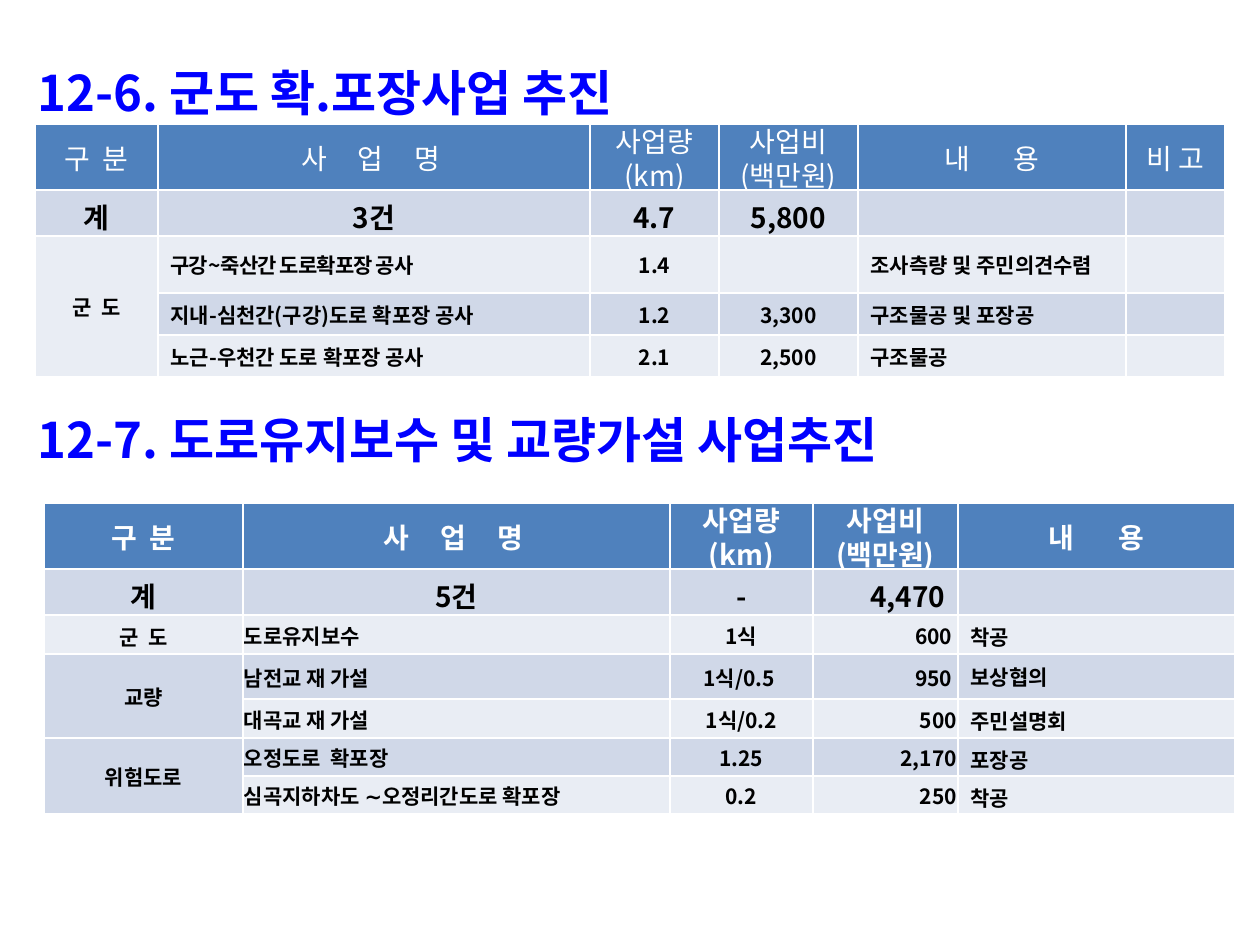
from dataclasses import dataclass

from lxml.etree import SubElement
from pptx import Presentation
from pptx.dml.color import RGBColor
from pptx.enum.text import MSO_ANCHOR, PP_ALIGN
from pptx.oxml.ns import qn
from pptx.util import Emu, Pt


@dataclass(frozen=True)
class Theme:
    """Colours, font and type sizes of the slide."""
    font: str = "Noto Sans CJK KR"
    title: str = "0000FF"
    head: str = "4F81BD"
    bands: tuple = ("E9EDF4", "D0D8E8")
    ink: str = "000000"
    white: str = "FFFFFF"
    big: int = 28
    mid: int = 16
    small: int = 12


THEME = Theme()
ALIGN = {"l": PP_ALIGN.LEFT, "c": PP_ALIGN.CENTER, "r": PP_ALIGN.RIGHT}
HEADS = ["구  분", "사     업     명 ", "사업량\n(km)", "사업비\n(백만원)", "내       용", "비 고"]
ROADS = [
    HEADS,
    ["계", "3건", "4.7", "5,800", "", ""],
    ["군  도", "구강~죽산간 도로확포장 공사", "1.4", "", "조사측량 및 주민의견수렴", ""],
    [None, "지내-심천간(구강)도로 확포장 공사", "1.2", "3,300", "구조물공 및 포장공", ""],
    [None, "노근-우천간 도로 확포장 공사", "2.1", "2,500", "구조물공", ""],
]
REPAIRS = [
    HEADS[:5],
    ["계", "5건", "-", "4,470", ""],
    ["군  도", "도로유지보수", " 1식 ", "600 ", "착공"],
    ["교량", "남전교 재 가설", "1식/0.5 ", "950 ", "보상협의"],
    [None, "대곡교 재 가설", "1식/0.2", "500", "주민설명회"],
    ["위험도로", "오정도로  확포장", "1.25", "2,170", "포장공"],
    [None, "심곡지하차도 ∼오정리간도로 확포장", "0.2", "250", "착공"],
]


def px(count):
    """Turn pixels into EMU."""
    return Emu(round(count * 914400 / 126))


def style(run, size, color, bold):
    """Give a run its font, size and colour."""
    run.font.name, run.font.size, run.font.bold = THEME.font, Pt(size), bold
    run.font.color.rgb = RGBColor.from_string(color)
    SubElement(run.font._element, qn("a:ea"), typeface=THEME.font)


def add_title(slide, box, text, ratio):
    """Place a section title in its box."""
    frame = slide.shapes.add_textbox(*map(px, box)).text_frame
    frame.word_wrap = True
    frame.text = text
    para = frame.paragraphs[0]
    para.line_spacing = ratio
    style(para.runs[0], THEME.big, THEME.title, True)


def add_edges(cell):
    """Draw thin white lines around a cell."""
    props = cell._tc.get_or_add_tcPr()
    for place, side in enumerate(("lnL", "lnR", "lnT", "lnB")):
        line = props.makeelement(qn("a:" + side), {"w": str(Pt(1))})
        fill = SubElement(line, qn("a:solidFill"))
        SubElement(fill, qn("a:srgbClr"), val=THEME.white)
        props.insert(place, line)


def fill_cell(cell, text, size, color, bold, align, tight):
    """Write and format the text of a cell."""
    cell.vertical_anchor = MSO_ANCHOR.MIDDLE
    if tight:
        cell.margin_left = cell.margin_right = cell.margin_top = px(1)
        cell.margin_bottom = 0
    cell.text_frame.text = text
    paras = cell.text_frame.paragraphs
    for para in paras:
        para.alignment = ALIGN[align]
        if not tight:
            para.space_before = Pt(size * 0.2)
        if len(paras) > 1:
            para.line_spacing = 0.7
        for run in para.runs:
            style(run, size, color, bold)
        if not text:
            SubElement(para._p, qn("a:endParaRPr"), sz=str(size * 100))


def add_grid(slide, spot, cols, rows, data, total, body, bold, tight):
    """Place a table with a header, a total row and banded body rows."""
    box = (*spot, sum(cols), sum(rows))
    table = slide.shapes.add_table(len(rows), len(cols), *map(px, box)).table
    for col, width in zip(table.columns, cols):
        col.width = px(width)
    for row, height in zip(table.rows, rows):
        row.height = px(height)
    for r, line in enumerate(data):
        aligns = ("c" * len(cols), total)[r] if r < 2 else body
        for c, text in enumerate(line):
            cell = table.cell(r, c)
            cell.fill.solid()
            shade = THEME.bands[r % 2] if r else THEME.head
            cell.fill.fore_color.rgb = RGBColor.from_string(shade)
            add_edges(cell)
            fill_cell(cell, text or "", THEME.mid if r < 2 else THEME.small,
                      THEME.ink if r else THEME.white, bold or r > 0,
                      aligns[c], r > 1 and c in tight)
    starts = [r for r, line in enumerate(data) if line[0] is not None]
    for top, end in zip(starts, starts[1:] + [len(data)]):
        if end - top > 1:
            table.cell(top, 0).merge(table.cell(end - 1, 0))
    return table


def main():
    """Build the slide and save it."""
    deck = Presentation()
    deck.slide_width, deck.slide_height = px(1260), px(945)
    slide = deck.slides.add_slide(deck.slide_layouts[6])
    add_title(slide, (25, 45, 1230, 76), "12-6. 군도 확.포장사업 추진", 1.2)
    roads = add_grid(slide, (35, 124), (123, 432, 129, 139, 268, 99),
                     (66, 46, 57, 42, 42), ROADS, "cccccc", "clcclc", False, ())
    name = roads.cell(2, 1).text_frame.paragraphs[0].runs[0]
    name.font._element.set("spc", "-50")
    add_title(slide, (25, 403, 1230, 70), "12-7. 도로유지보수 및 교량가설 사업추진", 1.0)
    add_grid(slide, (44, 503), (199, 427, 143, 145, 277),
             (66, 46, 39, 45, 39, 38, 38), REPAIRS, "cccrc", "clcrl", True, (1, 2, 3))
    deck.save("out.pptx")


if __name__ == "__main__":
    main()
